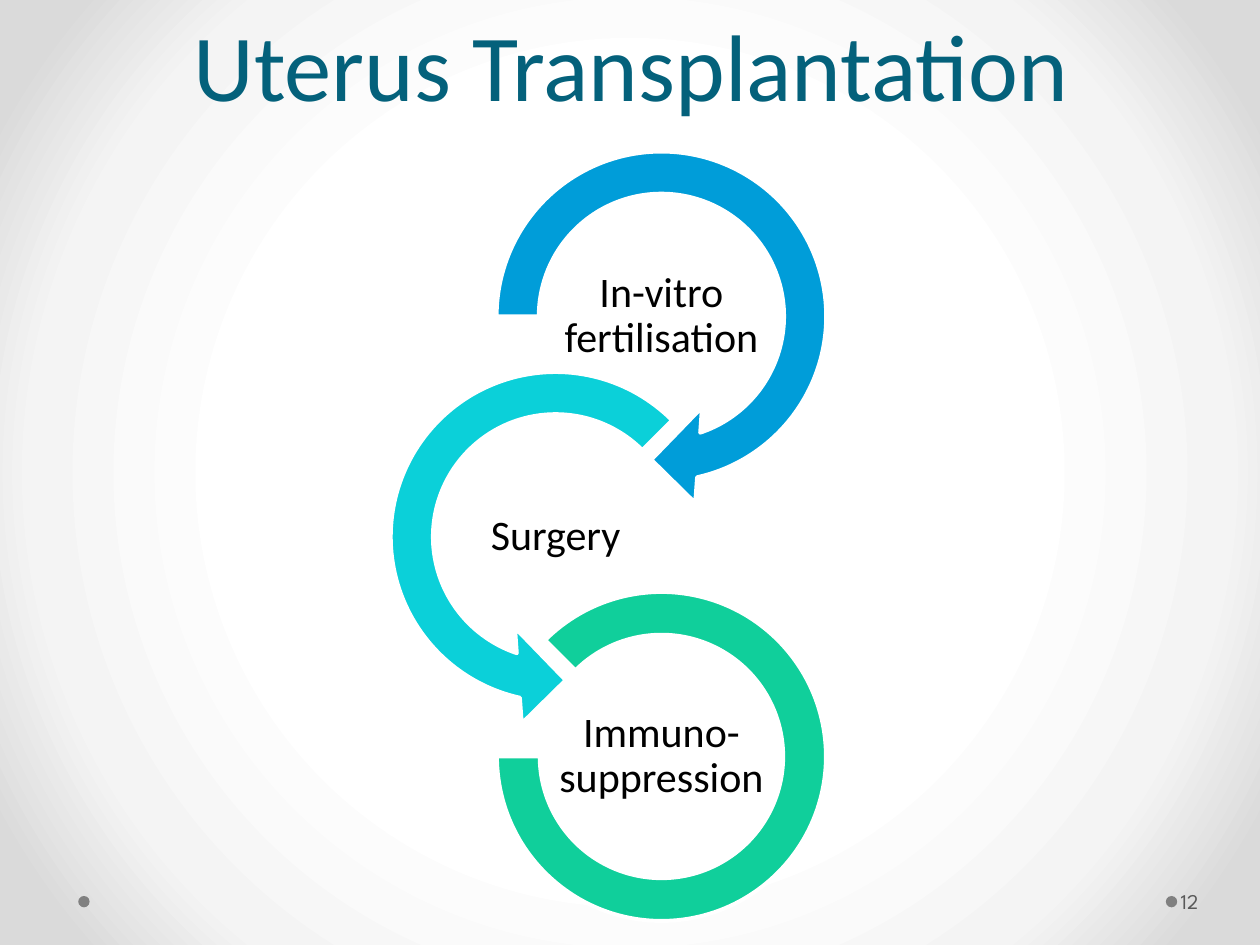
import pptx
import pptx.util
import pptx.oxml
import pptx.oxml.ns
import pptx.dml.color
import pptx.enum.shapes
import pptx.enum.text

Pt = pptx.util.Pt
SHAPE = pptx.enum.shapes.MSO_SHAPE
ALIGN = pptx.enum.text.PP_ALIGN
ANCHOR = pptx.enum.text.MSO_ANCHOR

COLORS = {
    "title": "04617B", "text": "000000", "number": "595959", "dot": "808080",
    "line": "FFFFFF", "blue": "009DD9", "cyan": "0BD0D9", "green": "10CF9B",
}
BACKDROP = [(50, "FFFFFF"), (76, "F4F4F4"), (92, "DADADA")]


def rgb(name):
    return pptx.dml.color.RGBColor.from_string(COLORS[name])


def add_backdrop(s):
    stops = "".join(
        f'<a:gs pos="{pos * 1000}"><a:srgbClr val="{color}"/></a:gs>'
        for pos, color in BACKDROP)
    bg = pptx.oxml.parse_xml(
        f'<p:bg {pptx.oxml.ns.nsdecls("p", "a")}><p:bgPr><a:gradFill rotWithShape="1">'
        f'<a:gsLst>{stops}</a:gsLst><a:path path="circle">'
        '<a:fillToRect l="50000" t="50000" r="50000" b="50000"/></a:path>'
        '</a:gradFill><a:effectLst/></p:bgPr></p:bg>')
    s._element.cSld.insert(0, bg)


def add_shape(s, kind, box, color, adjustments=()):
    sp = s.shapes.add_shape(kind, *map(Pt, box))
    sp.shadow.inherit = False
    sp.fill.solid()
    sp.fill.fore_color.rgb = rgb(color)
    sp.line.fill.background()
    for i, value in enumerate(adjustments):
        sp.adjustments[i] = value
    return sp


def add_text(s, box, text, size, color, font="Calibri", align=ALIGN.CENTER,
             anchor=ANCHOR.MIDDLE, spacing=None, insets=(1.5, 1.5, 1.5, 1.5)):
    tf = s.shapes.add_textbox(*map(Pt, box)).text_frame
    tf.word_wrap = True
    tf.vertical_anchor = anchor
    tf.margin_left, tf.margin_top, tf.margin_right, tf.margin_bottom = map(Pt, insets)
    p = tf.paragraphs[0]
    p.alignment = align
    p.line_spacing = spacing
    r = p.add_run()
    r.text = text
    r.font.size = Pt(size)
    r.font.name = font
    r.font.color.rgb = rgb(color)


def add_title(s, box):
    add_text(s, box, "Uterus Transplantation", 54, "title", anchor=ANCHOR.BOTTOM,
             spacing=Pt(58), insets=(7.2, 3.6, 7.2, 3.6))


def add_step(s, box, kind, adjustments, color, text, label_size):
    x, y, w, h = box
    sp = add_shape(s, kind, box, color, adjustments)
    sp.line.color.rgb = rgb("line")
    sp.line.width = Pt(2.25)
    label_w, label_h = label_size
    label = (x + (w - label_w) / 2, y + (h - label_h) / 2, label_w, label_h)
    add_text(s, label, text, 24, "text", spacing=0.9)


def add_cycle(s, box):
    x, y, w, h = box
    arrow, ring, shift, step = 219, 188, 60.5, 126
    right = x + w - arrow
    inset = (arrow - ring) / 2
    add_step(s, (right, y, arrow, arrow), SHAPE.CIRCULAR_ARROW,
             (0.11, 11.42, 45, 108, 0.125), "blue", "In-vitro fertilisation", (122, 60.5))
    add_step(s, (right - shift, y + step, arrow, arrow), SHAPE.LEFT_CIRCULAR_ARROW,
             (0.11, 11.42, 63, 189, 0.125), "cyan", "Surgery", (122, 60.5))
    add_step(s, (right + inset, y + h - ring, ring, ring), SHAPE.BLOCK_ARC,
             (135, 108, 0.13), "green", "Immuno-suppression", (156, 90.5))


def add_footer(s, box):
    x, y, w, h = box
    dot = 6.5
    for dot_x in (x, x + 621.5):
        add_shape(s, SHAPE.OVAL, (dot_x, y + 11.5, dot, dot), "dot")
    add_text(s, (x + w - 44, y, 44, h), "12", 12, "number", "League Spartan",
             ALIGN.LEFT, insets=(2.2, 3.6, 3.6, 3.6))


def main():
    prs = pptx.Presentation()
    prs.slide_width, prs.slide_height = Pt(720), Pt(540)
    s = prs.slides.add_slide(prs.slide_layouts[6])
    add_backdrop(s)
    add_title(s, (36.5, -53.5, 648, 126))
    add_cycle(s, (208, 71.3, 279.5, 455))
    add_footer(s, (44.7, 500.5, 671.8, 29))
    prs.save("out.pptx")


if __name__ == "__main__":
    main()
